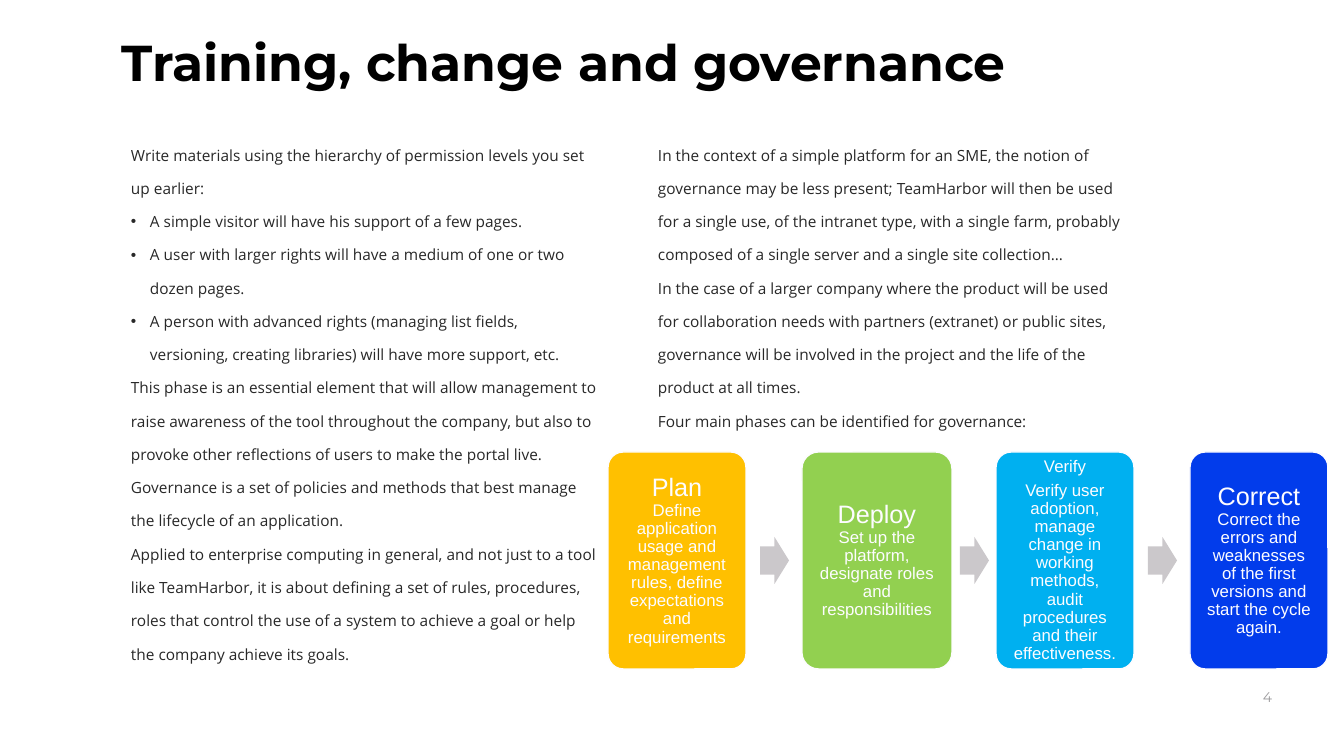
from lxml import etree
from pptx import Presentation
from pptx.dml.color import RGBColor
from pptx.enum.shapes import MSO_SHAPE
from pptx.enum.text import MSO_ANCHOR, PP_ALIGN
from pptx.oxml.ns import qn
from pptx.util import Pt

PX = 914400 / 100.8
ROUNDED, ARROW = MSO_SHAPE.ROUNDED_RECTANGLE, MSO_SHAPE.RIGHT_ARROW
MIDDLE, TOP = MSO_ANCHOR.MIDDLE, MSO_ANCHOR.TOP
LEFT, CENTER = PP_ALIGN.LEFT, PP_ALIGN.CENTER

COLORS = {
    "title": "000000", "body": "282828", "number": "9B9A9C",
    "light": "FDFCFF", "arrow": "CBC8CB",
    "plan": "FFC000", "deploy": "92D050", "verify": "00B0F0", "correct": "023CEB",
}

# Body text: (is bullet, text)
LEFT_COLUMN = [
    (False, "Write materials using the hierarchy of permission levels you set up earlier:"),
    (True, "A simple visitor will have his support of a few pages."),
    (True, "A user with larger rights will have a medium of one or two dozen pages."),
    (True, "A person with advanced rights (managing list fields, versioning, "
           "creating libraries) will have more support, etc."),
    (False, "This phase is an essential element that will allow management to raise "
            "awareness of the tool throughout the company, but also to provoke other "
            "reflections of users to make the portal live."),
    (False, "Governance is a set of policies and methods that best manage the "
            "lifecycle of an application."),
    (False, "Applied to enterprise computing in general, and not just to a tool like "
            "TeamHarbor, it is about defining a set of rules, procedures, roles that "
            "control the use of a system to achieve a goal or help the company achieve "
            "its goals."),
]
RIGHT_COLUMN = [
    (False, "In the context of a simple platform for an SME, the notion of governance "
            "may be less present; TeamHarbor will then be used for a single use, of the "
            "intranet type, with a single farm, probably composed of a single server "
            "and a single site collection..."),
    (False, "In the case of a larger company where the product will be used for "
            "collaboration needs with partners (extranet) or public sites, governance "
            "will be involved in the project and the life of the product at all times."),
    (False, "Four main phases can be identified for governance:"),
]

# Phases: colour, width, heading size, paragraphs (\v is a line break)
PHASES = [
    ("plan", 138, 18, ["Plan\vDefine application usage and management rules, "
                       "define expectations and requirements"]),
    ("deploy", 150, 18, ["Deploy\vSet up the platform, designate roles and responsibilities"]),
    ("verify", 138, 12, ["Verify", "Verify user adoption, manage change in working "
                         "methods, audit procedures and their effectiveness."]),
    ("correct", 138, 18, ["Correct\vCorrect the errors and weaknesses of the first "
                          "versions and start the cycle again."]),
]
PHASE_LEFT, PHASE_TOP, PHASE_STEP, PHASE_HEIGHT = 608, 452, 194, 217
ARROW_WIDTH, ARROW_HEIGHT = 29, 47


def px(length):
    return round(length * PX)


def color(name):
    return RGBColor.from_string(COLORS[name])


def style_span(span, font, size, tint, bold=False):
    span.font.name = font
    span.font.size = Pt(size)
    span.font.bold = bold
    span.font.color.rgb = color(tint)


def set_frame(frame, margin_x, margin_y, anchor=TOP):
    frame.word_wrap = True
    frame.vertical_anchor = anchor
    frame.margin_left = frame.margin_right = px(margin_x)
    frame.margin_top = frame.margin_bottom = px(margin_y)


def add_label(page, left, top, width, height, text, font, size, tint, bold=False, align=LEFT):
    box = page.shapes.add_textbox(px(left), px(top), px(width), px(height))
    set_frame(box.text_frame, 2, 2)
    box.text_frame.text = text
    para = box.text_frame.paragraphs[0]
    para.alignment = align
    style_span(para.runs[0], font, size, tint, bold)


def add_bullet(para):
    properties = para._p.get_or_add_pPr()
    properties.set("marL", str(px(19)))
    properties.set("indent", str(px(-19)))
    font = etree.SubElement(properties, qn("a:buFont"))
    font.set("typeface", "Arial")
    bullet = etree.SubElement(properties, qn("a:buChar"))
    bullet.set("char", "•")


def add_column(page, left, top, width, height, items):
    box = page.shapes.add_textbox(px(left), px(top), px(width), px(height))
    frame = box.text_frame
    set_frame(frame, 10, 5)
    frame.text = "\n".join(text for _, text in items)
    for para, (is_bullet, _) in zip(frame.paragraphs, items):
        para.line_spacing = 1.8
        if is_bullet:
            add_bullet(para)
        style_span(para.runs[0], "Open Sans", 11, "body")


def add_block(page, kind, left, top, width, height, tint):
    block = page.shapes.add_shape(kind, px(left), px(top), px(width), px(height))
    block.shadow.inherit = False
    block.fill.solid()
    block.fill.fore_color.rgb = color(tint)
    block.line.fill.background()
    return block


def add_phase(page, left, width, tint, heading_size, texts):
    card = add_block(page, ROUNDED, left, PHASE_TOP, width, PHASE_HEIGHT, tint)
    card.adjustments[0] = 0.11
    card.line.color.rgb = color("light")
    card.line.width = Pt(1)
    frame = card.text_frame
    set_frame(frame, 12, 2, MIDDLE)
    frame.text = "\n".join(texts)
    for para in frame.paragraphs:
        para.alignment = CENTER
        para.line_spacing = 0.9
        for span in para.runs:
            style_span(span, "Arial", 12, "light")
    for para in frame.paragraphs[:-1]:
        para.space_after = Pt(4.2)
    frame.paragraphs[0].runs[0].font.size = Pt(heading_size)


def add_arrow(page, gap_left, gap_right):
    left = (gap_left + gap_right - ARROW_WIDTH + 1) // 2
    top = PHASE_TOP + (PHASE_HEIGHT - ARROW_HEIGHT) // 2
    arrow = add_block(page, ARROW, left, top, ARROW_WIDTH, ARROW_HEIGHT, "arrow")
    arrow.adjustments[0] = 0.6


def main():
    deck = Presentation()
    deck.slide_width, deck.slide_height = px(1344), px(756)
    page = deck.slides.add_slide(deck.slide_layouts[6])

    # Title, columns and page number
    add_column(page, 648, 126, 487, 342, RIGHT_COLUMN)
    add_label(page, 1243, 687, 49, 21, "4", "Montserrat", 10, "number", align=CENTER)
    add_label(page, 120, 29, 924, 88, "Training, change and governance",
              "Montserrat", 36, "title", bold=True)
    add_column(page, 121, 126, 487, 543, LEFT_COLUMN)

    # Four phases with an arrow centred in each gap
    for index, (tint, width, heading_size, texts) in enumerate(PHASES):
        left = PHASE_LEFT + index * PHASE_STEP
        add_phase(page, left, width, tint, heading_size, texts)
        if index < len(PHASES) - 1:
            add_arrow(page, left + width, left + PHASE_STEP)

    deck.save("out.pptx")


if __name__ == "__main__":
    main()
